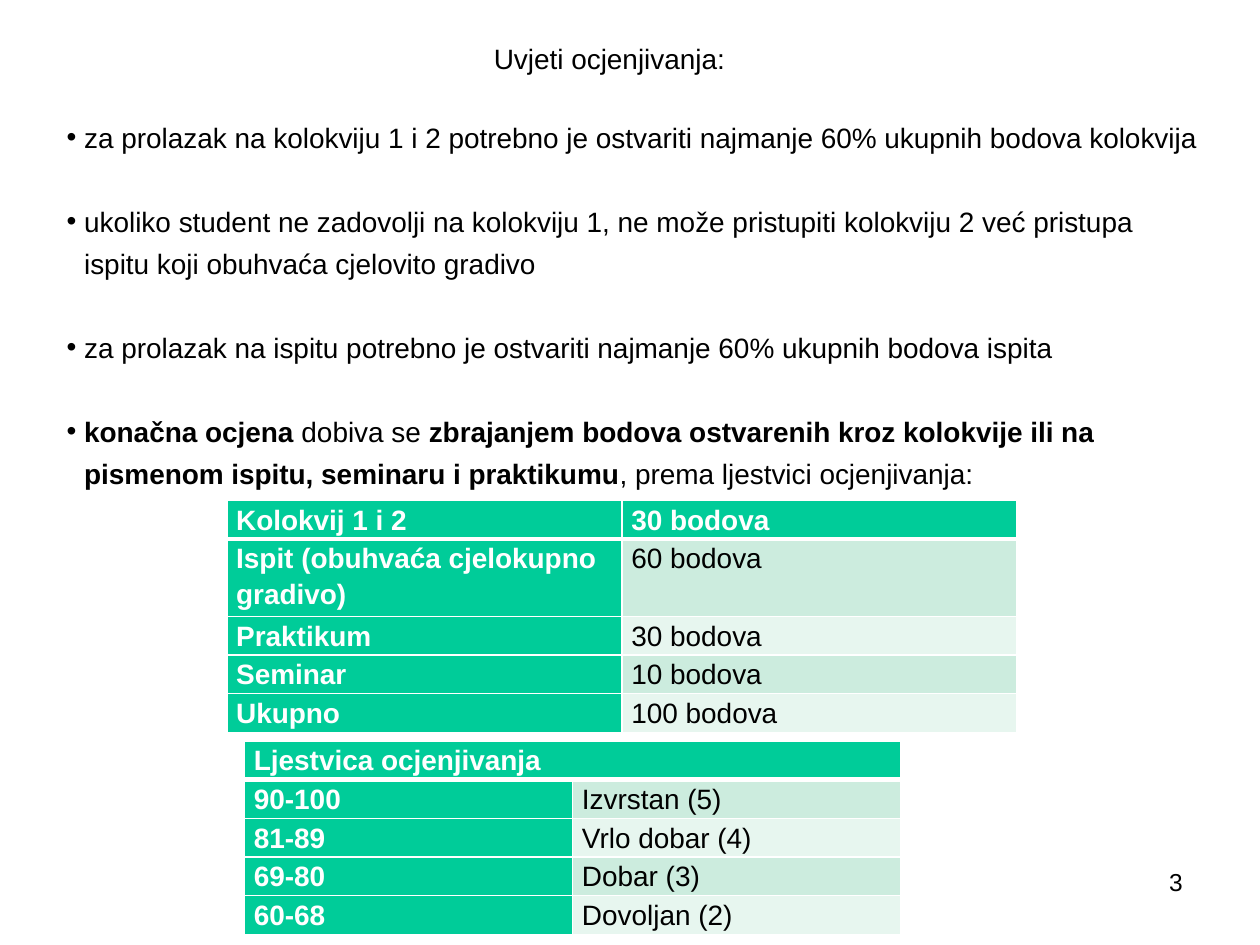
from lxml import etree
from pptx import Presentation
from pptx.dml.color import RGBColor
from pptx.enum.text import MSO_ANCHOR, MSO_AUTO_SIZE, PP_ALIGN
from pptx.oxml.ns import qn
from pptx.util import Pt

LEFT, RIGHT = PP_ALIGN.LEFT, PP_ALIGN.RIGHT
TOP = MSO_ANCHOR.TOP
NO_FIT = MSO_AUTO_SIZE.NONE
TITLE_ONLY = 5

BLACK = RGBColor(0x00, 0x00, 0x00)
WHITE = RGBColor(0xFF, 0xFF, 0xFF)
GREEN = RGBColor(0x00, 0xCC, 0x99)
BANDS = (RGBColor(0xCC, 0xEC, 0xDE), RGBColor(0xE7, 0xF6, 0xEF))

FONT = "Arial"
ROW_HEIGHT = 22.08
BULLET_INDENT = 10

# Each rule is a list of (text, bold) spans
RULES = [
    [("za prolazak na kolokviju 1 i 2 potrebno je ostvariti najmanje 60% "
      "ukupnih bodova kolokvija", False)],
    [("ukoliko student ne zadovolji na kolokviju 1, ne može pristupiti "
      "kolokviju 2 već pristupa ispitu koji obuhvaća cjelovito gradivo", False)],
    [("za prolazak na ispitu potrebno je ostvariti najmanje 60% "
      "ukupnih bodova ispita", False)],
    [("konačna ocjena ", True), ("dobiva se ", False),
     ("zbrajanjem bodova ostvarenih kroz kolokvije ili na pismenom ispitu, "
      "seminaru i praktikumu", True),
     (", prema ljestvici ocjenjivanja:", False)],
]
POINTS = [
    ("Kolokvij 1 i 2", "30 bodova"),
    ("Ispit (obuhvaća cjelokupno gradivo)", "60 bodova"),
    ("Praktikum", "30 bodova"),
    ("Seminar", "10 bodova"),
    ("Ukupno", "100 bodova"),
]
GRADES = [
    ("Ljestvica ocjenjivanja", ""),
    ("90-100", "Izvrstan (5)"),
    ("81-89", "Vrlo dobar (4)"),
    ("69-80", "Dobar (3)"),
    ("60-68", "Dovoljan (2)"),
]


def set_font(para, size=16, color=BLACK, bold=None):
    font = para.font
    font.name, font.size, font.bold = FONT, Pt(size), bold
    font.color.rgb = color


def add_title(page, text):
    title = page.shapes.title
    title.left, title.top, title.width, title.height = Pt(275), Pt(20), Pt(148), Pt(27)
    frame = title.text_frame
    frame.text = text
    frame.auto_size, frame.word_wrap, frame.vertical_anchor = NO_FIT, False, TOP
    para = frame.paragraphs[0]
    para.alignment = LEFT
    set_font(para)


def add_text_box(page, left, top, width, height):
    box = page.shapes.add_textbox(Pt(left), Pt(top), Pt(width), Pt(height))
    box.text_frame.word_wrap = True
    return box.text_frame


def add_bullet(para):
    props = para._p.get_or_add_pPr()
    props.set("marL", str(Pt(BULLET_INDENT)))
    props.set("indent", str(-Pt(BULLET_INDENT)))
    etree.SubElement(props, qn("a:buFont"), typeface=FONT)
    etree.SubElement(props, qn("a:buChar"), char="•")


def add_rules(page):
    frame = add_text_box(page, 31, 60.5, 662, 225)
    for index, spans in enumerate(RULES):
        para = frame.add_paragraph() if index else frame.paragraphs[0]
        para.line_spacing = Pt(24)
        para.space_before = Pt(24 if index else 0)
        add_bullet(para)
        set_font(para)
        for text, bold in spans:
            span = para.add_run()
            span.text = text
            span.font.bold = bold


def add_borders(cell, top, bottom):
    props = cell._tc.get_or_add_tcPr()
    for side, width in (("L", 1), ("R", 1), ("T", top), ("B", bottom)):
        line = etree.SubElement(props, qn(f"a:ln{side}"), w=str(Pt(width)))
        fill = etree.SubElement(line, qn("a:solidFill"))
        etree.SubElement(fill, qn("a:srgbClr"), val=str(WHITE))


def format_cell(cell, text, row, column):
    strong = row == 0 or column == 0
    cell.margin_left = cell.margin_right = Pt(5.4)
    cell.margin_top = cell.margin_bottom = 0
    # A thick rule separates the header from the body
    add_borders(cell, top=3 if row == 1 else 1, bottom=3 if row == 0 else 1)
    cell.fill.solid()
    cell.fill.fore_color.rgb = GREEN if strong else BANDS[(row - 1) % 2]
    para = cell.text_frame.paragraphs[0]
    para.line_spacing = 1.15
    set_font(para, color=WHITE if strong else BLACK, bold=strong)
    if text:
        para.add_run().text = text


def add_table(page, rows, left, top, column_width, lines_by_row):
    heights = [ROW_HEIGHT * lines_by_row.get(row, 1) for row in range(len(rows))]
    table = page.shapes.add_table(
        len(rows), 2, Pt(left), Pt(top), Pt(2 * column_width), Pt(sum(heights))).table
    for column in table.columns:
        column.width = Pt(column_width)
    for row, texts in enumerate(rows):
        table.rows[row].height = Pt(heights[row])
        for column, text in enumerate(texts):
            format_cell(table.cell(row, column), text, row, column)
    return table


def add_page_number(page, number):
    frame = add_text_box(page, 516, 492, 167, 37)
    para = frame.paragraphs[0]
    para.text = number
    para.alignment = RIGHT
    set_font(para, size=14)


def main():
    deck = Presentation()
    deck.slide_width, deck.slide_height = Pt(720), Pt(540)
    page = deck.slides.add_slide(deck.slide_layouts[TITLE_ONLY])

    # Heading and grading rules
    add_title(page, "Uvjeti ocjenjivanja:")
    add_rules(page)

    # Points per activity, then the grading scale
    add_table(page, POINTS, 129.6, 286, 225.8, {1: 2})
    scale = add_table(page, GRADES, 139.7, 423.5, 187.5, {})
    scale.cell(0, 0).merge(scale.cell(0, 1))

    add_page_number(page, "3")
    deck.save("out.pptx")


if __name__ == "__main__":
    main()
